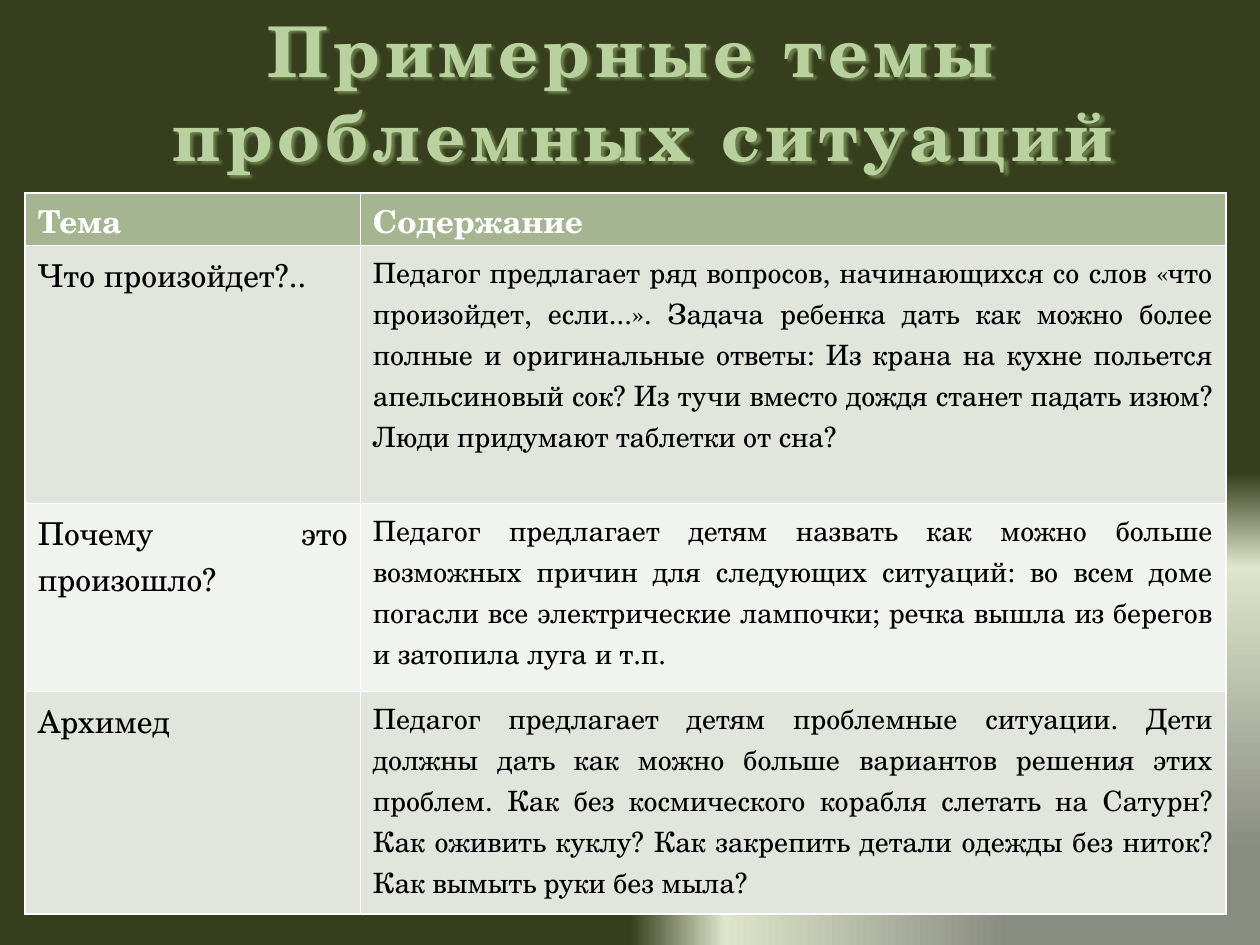
from pptx import Presentation
from pptx.dml.color import RGBColor
from pptx.enum.text import MSO_ANCHOR, MSO_AUTO_SIZE, PP_ALIGN
from pptx.oxml import parse_xml
from pptx.util import Inches, Pt

TOP = MSO_ANCHOR.TOP
FIXED = MSO_AUTO_SIZE.NONE
CENTER, JUSTIFY = PP_ALIGN.CENTER, PP_ALIGN.JUSTIFY

FONT = "TeX Gyre Schola"
WHITE = RGBColor(0xFF, 0xFF, 0xFF)
BLACK = RGBColor(0, 0, 0)
TITLE_GREEN = RGBColor(0xB9, 0xD1, 0x9F)
SHADOW_GREEN = RGBColor(0x6B, 0x80, 0x4A)
HEADER_GREEN = RGBColor(0xA5, 0xB5, 0x92)
BANDS = [RGBColor(0xE1, 0xE5, 0xDC), RGBColor(0xF0, 0xF3, 0xEE)]
BACKGROUND_STOPS = [
    (20, RGBColor(0x89, 0x8C, 0x81)),
    (80, RGBColor(0xDF, 0xE5, 0xCA)),
    (100, RGBColor(0x36, 0x3E, 0x1E)),
]
NAMESPACES = (
    'xmlns:a="http://schemas.openxmlformats.org/drawingml/2006/main" '
    'xmlns:p="http://schemas.openxmlformats.org/presentationml/2006/main"'
)

TITLE_LINES = ["Примерные темы ", "проблемных ситуаций"]
TOPICS = [
    ("Тема", "Содержание"),
    ("Что произойдет?..",
     "Педагог предлагает ряд вопросов, начинающихся со слов «что произойдет, "
     "если...». Задача ребенка дать как можно более полные и оригинальные ответы: "
     "Из крана на кухне польется апельсиновый сок? Из тучи вместо дождя станет "
     "падать изюм? Люди придумают таблетки от сна?"),
    ("Почему это произошло?",
     "Педагог предлагает детям назвать как можно больше возможных причин для "
     "следующих ситуаций: во всем доме погасли все электрические лампочки; речка "
     "вышла из берегов и затопила луга и т.п."),
    ("Архимед",
     "Педагог предлагает детям проблемные ситуации. Дети должны дать как можно "
     "больше вариантов решения этих проблем. Как без космического корабля слетать "
     "на Сатурн? Как оживить куклу? Как закрепить детали одежды без ниток? Как "
     "вымыть руки без мыла?"),
]
COLUMN_WIDTHS = [2.66, 6.87]
ROW_HEIGHTS = [0.4, 2.05, 1.49, 1.77]


def paint_background(slide):
    """Fill the slide with a gradient centred on its lower right corner."""
    stops = "".join(
        f'<a:gs pos="{share * 1000}"><a:srgbClr val="{color}"/></a:gs>'
        for share, color in BACKGROUND_STOPS
    )
    background = parse_xml(
        f'<p:bg {NAMESPACES}><p:bgPr><a:gradFill rotWithShape="1">'
        f'<a:gsLst>{stops}</a:gsLst><a:path path="rect">'
        '<a:fillToRect l="100000" t="100000"/></a:path></a:gradFill>'
        '<a:effectLst/></p:bgPr></p:bg>'
    )
    slide._element.cSld.insert(0, background)


def add_title(slide):
    """Write the spaced, shadowed heading in the title placeholder."""
    title = slide.shapes.title
    title.left, title.top = Inches(1.18), Inches(0.01)
    title.width, title.height = Inches(7.85), Inches(2.12)
    frame = title.text_frame
    frame.text = "\n".join(TITLE_LINES)
    frame.word_wrap = False
    frame.auto_size = FIXED
    frame.vertical_anchor = TOP
    for line in frame.paragraphs:
        line.alignment = CENTER
        line.line_spacing = 1.0
        line.space_before = Pt(0)
        line.font.name, line.font.size, line.font.bold = FONT, Pt(40), True
        line.font.color.rgb = TITLE_GREEN
        for run in line.runs:
            run.font._element.set("spc", "300")
    title._element.spPr.append(parse_xml(
        f'<a:effectLst {NAMESPACES}><a:outerShdw blurRad="12700" dist="25400" '
        f'dir="2700000"><a:srgbClr val="{SHADOW_GREEN}"/></a:outerShdw></a:effectLst>'
    ))


def add_topics(slide):
    """Lay out the table of topics and their contents."""
    table = slide.shapes.add_table(
        len(TOPICS), len(COLUMN_WIDTHS), Inches(0.2), Inches(1.53),
        Inches(sum(COLUMN_WIDTHS)), Inches(sum(ROW_HEIGHTS)),
    ).table
    for column, width in zip(table.columns, COLUMN_WIDTHS):
        column.width = Inches(width)
    for row_index, (topic, height) in enumerate(zip(TOPICS, ROW_HEIGHTS)):
        table.rows[row_index].height = Inches(height)
        is_header = row_index == 0
        for column_index, wording in enumerate(topic):
            cell = table.cell(row_index, column_index)
            cell.fill.solid()
            cell.fill.fore_color.rgb = (
                HEADER_GREEN if is_header else BANDS[(row_index - 1) % 2]
            )
            cell.margin_top = Inches(0.03 if is_header else 0.05)
            cell.margin_bottom = 0
            cell.text = wording
            paragraph = cell.text_frame.paragraphs[0]
            paragraph.alignment = JUSTIFY
            font = paragraph.font
            font.name, font.bold = FONT, is_header
            font.size = Pt(18 if is_header or column_index == 0 else 16)
            font.color.rgb = WHITE if is_header else BLACK


def main():
    """Build the slide and save it."""
    deck = Presentation()
    deck.slide_width, deck.slide_height = Inches(10), Inches(7.5)
    slide = deck.slides.add_slide(deck.slide_layouts.get_by_name("Title Only"))
    paint_background(slide)
    add_title(slide)
    add_topics(slide)
    deck.save("out.pptx")


if __name__ == "__main__":
    main()
